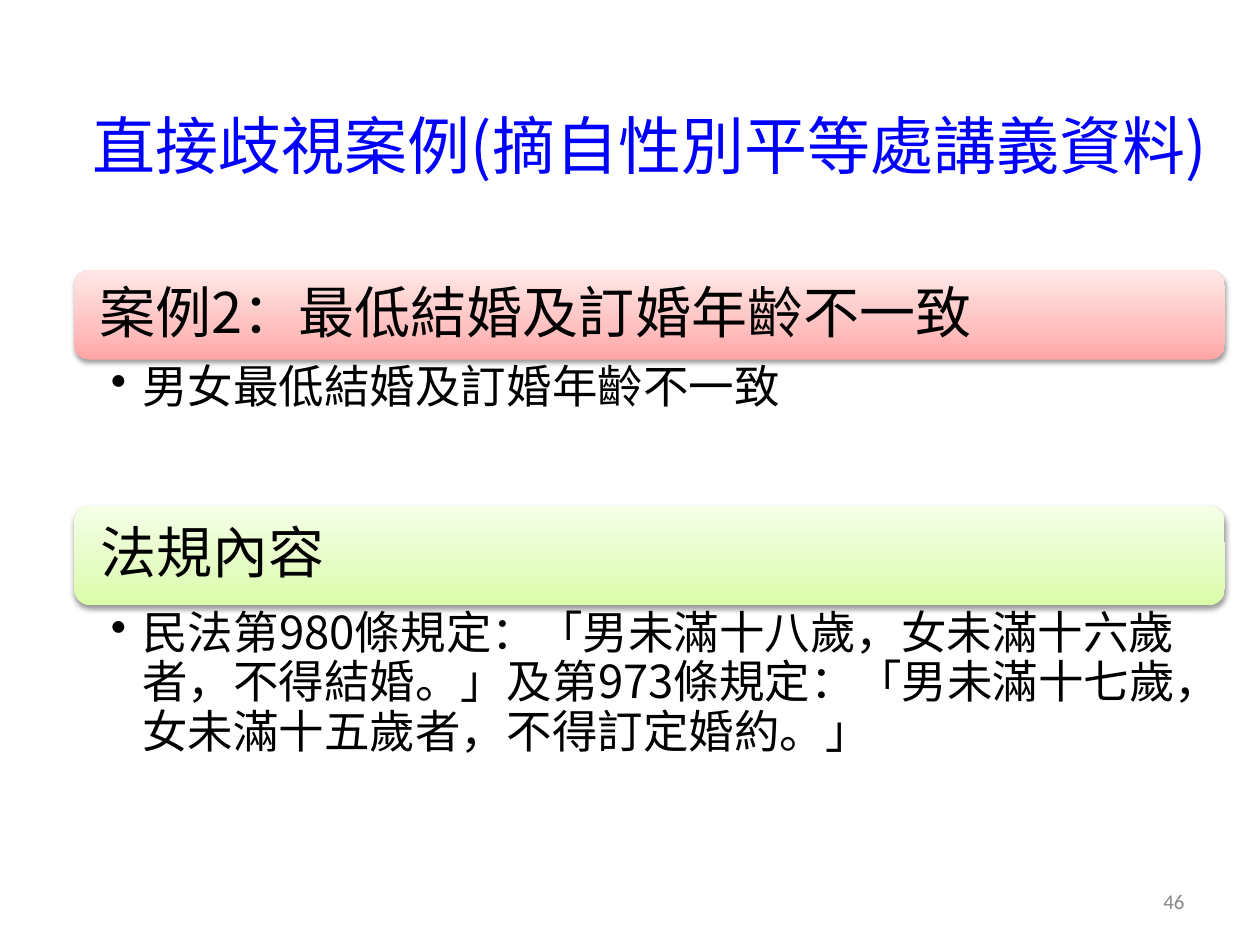
from dataclasses import dataclass

from lxml import etree
from pptx import Presentation
from pptx import util as u
from pptx.dml.color import RGBColor
from pptx.enum import shapes, text
from pptx.oxml import ns


@dataclass(frozen=True)
class Theme:
    font: str = "Noto Sans CJK SC"
    number_font: str = "Calibri"
    title_color: str = "0000FF"
    text_color: str = "000000"
    number_color: str = "898989"
    shadow_color: str = "000000"
    red: tuple = ((0, "FFA6A5"), (35, "FFC0BF"), (100, "FFE7E7"))
    green: tuple = ((0, "DAFDA7"), (35, "E4FCC2"), (100, "F5FFE7"))
    title_size: int = 36
    heading_size: int = 32
    body_size: int = 26
    number_size: int = 12


def add_child(parent, tag, **attributes):
    values = {name: str(value) for name, value in attributes.items()}
    return etree.SubElement(parent, ns.qn(tag), values)


def write_text(box, words, *, size, color, font, align=text.PP_ALIGN.LEFT,
               anchor=text.MSO_ANCHOR.MIDDLE, insets=(7.2, 3.6, 7.2, 3.6),
               line_spacing=None, bullet=False):
    frame = box.text_frame
    frame.word_wrap = True
    frame.auto_size = text.MSO_AUTO_SIZE.NONE
    frame.vertical_anchor = anchor
    (frame.margin_left, frame.margin_top,
     frame.margin_right, frame.margin_bottom) = map(u.Pt, insets)
    para = frame.paragraphs[0]
    para.alignment = align
    if line_spacing:
        para.line_spacing = line_spacing
    if bullet:
        para.level = 1
        properties = para._p.get_or_add_pPr()
        properties.set("marL", str(u.Pt(18)))
        properties.set("indent", str(u.Pt(-18)))
        add_child(properties, "a:buChar", char="•")
    span = para.add_run()
    span.text = words
    span.font.size = u.Pt(size)
    span.font.color.rgb = RGBColor.from_string(color)
    span.font.name = font
    add_child(span._r.get_or_add_rPr(), "a:ea", typeface=font)


class SlideBuilder:
    def __init__(self, deck, theme):
        self.theme = theme
        self.page = deck.slides.add_slide(deck.slide_layouts[5])

    def title(self, words, left, top, width, height):
        box = self.page.shapes.title
        box.left, box.top, box.width, box.height = map(
            u.Pt, (left, top, width, height))
        write_text(box, words, size=self.theme.title_size,
                   color=self.theme.title_color, font=self.theme.font,
                   align=text.PP_ALIGN.CENTER)

    def banner(self, words, stops, left, top, width, height):
        box = self.page.shapes.add_shape(
            shapes.MSO_SHAPE.ROUNDED_RECTANGLE,
            *map(u.Pt, (left, top, width, height)))
        box.line.fill.background()
        box.shadow.inherit = False
        self.gradient(box, stops)
        self.soft_shadow(box)
        write_text(box, words, size=self.theme.heading_size,
                   color=self.theme.text_color, font=self.theme.font,
                   insets=(12, 9.6, 12, 9.6), line_spacing=0.9)

    def gradient(self, box, stops):
        box.fill.gradient()
        box.fill.gradient_angle = 90
        stop_list = box._element.spPr.find(".//" + ns.qn("a:gsLst"))
        for stop in list(stop_list):
            stop_list.remove(stop)
        for position, color in stops:
            stop = add_child(stop_list, "a:gs", pos=position * 1000)
            add_child(stop, "a:srgbClr", val=color)

    def soft_shadow(self, box):
        effects = box._element.spPr.find(ns.qn("a:effectLst"))
        shadow = add_child(effects, "a:outerShdw", blurRad=u.Pt(3.1),
                           dist=u.Pt(1.6), dir=90 * 60000, rotWithShape=0)
        color = add_child(shadow, "a:srgbClr", val=self.theme.shadow_color)
        add_child(color, "a:alpha", val=38000)

    def bullet(self, words, left, top, width, height, align):
        box = self.page.shapes.add_textbox(
            *map(u.Pt, (left, top, width, height)))
        write_text(box, words, size=self.theme.body_size,
                   color=self.theme.text_color, font=self.theme.font,
                   align=align, anchor=text.MSO_ANCHOR.TOP,
                   insets=(20.9, 2.9, 14.4, 2.9), line_spacing=0.9,
                   bullet=True)

    def page_number(self, words, left, top, width, height):
        box = self.page.shapes.add_textbox(
            *map(u.Pt, (left, top, width, height)))
        write_text(box, words, size=self.theme.number_size,
                   color=self.theme.number_color,
                   font=self.theme.number_font, align=text.PP_ALIGN.RIGHT)


def main():
    deck = Presentation()
    deck.slide_width, deck.slide_height = u.Pt(720), u.Pt(540)
    theme = Theme()
    builder = SlideBuilder(deck, theme)
    builder.title("直接歧視案例(摘自性別平等處講義資料)", 31, 43.2, 680.4, 78.5)

    sections = (
        ("案例2：最低結婚及訂婚年齡不一致", theme.red, 51,
         "男女最低結婚及訂婚年齡不一致", 83.5, text.PP_ALIGN.JUSTIFY),
        ("法規內容", theme.green, 57,
         "民法第980條規定：「男未滿十八歲，女未滿十六歲者，不得結婚。」"
         "及第973條規定：「男未滿十七歲，女未滿十五歲者，不得訂定婚約。」",
         96.5, text.PP_ALIGN.LEFT),
    )
    left, top, width = 42.5, 154.5, 657.4
    for heading, stops, banner_height, body, body_height, align in sections:
        builder.banner(heading, stops, left, top, width, banner_height)
        top += banner_height
        builder.bullet(body, left, top, width, body_height, align)
        top += body_height

    builder.page_number("46", 516, 500.5, 168, 28.8)
    deck.save("out.pptx")


if __name__ == "__main__":
    main()
